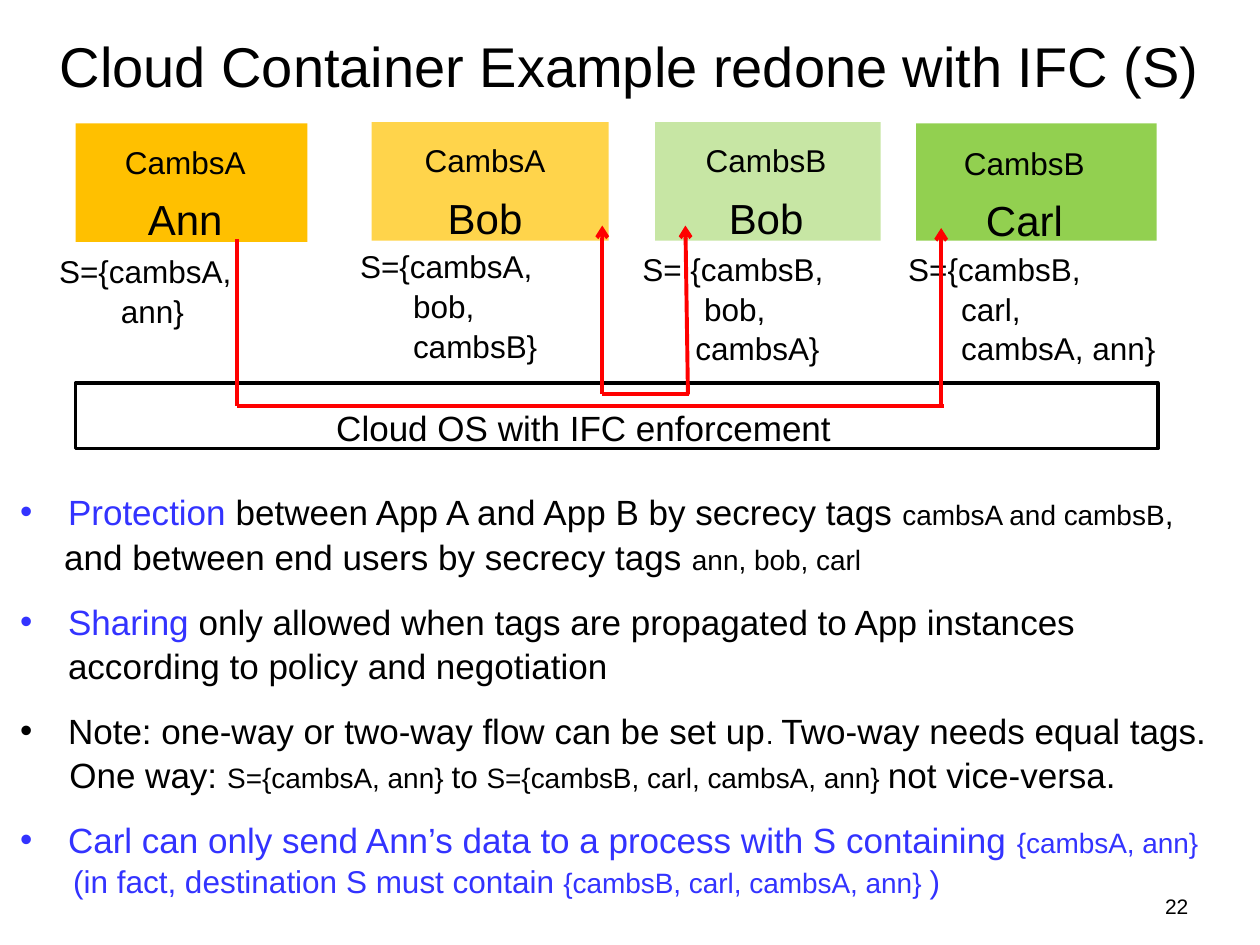
from lxml import etree
from pptx import Presentation
from pptx import util as u
from pptx.dml.color import RGBColor
from pptx.enum import shapes, text
from pptx.oxml.ns import qn

COLORS = {
    "black": "000000", "blue": "3333FF", "red": "FF0000",
    "amber": "FFC000", "light amber": "FFD44B",
    "light green": "C7E6A4", "green": "92D050",
}
FONT = "Arial"
LINE_SPACING = 1.05

# Containers: box, fill, app, user, name position, label position and width,
# label lines as (indent, text)
CONTAINERS = [
    ((0.6, 0.98, 1.84, 0.94), "amber", "CambsA", "Ann", (0.88, 0.98),
     (0.37, 1.94, 2.21), [(0, "S={cambsA,"), (0.49, "ann}")]),
    ((2.95, 0.97, 1.88, 0.94), "light amber", "CambsA", "Bob", (3.26, 0.97),
     (2.76, 1.9, 2.2), [(0, "S={cambsA,"), (0.42, "bob,"), (0.42, "cambsB}")]),
    ((5.2, 0.97, 1.79, 0.94), "light green", "CambsB", "Bob", (5.49, 0.97),
     (5, 1.92, 2.16), [(0, "S= {cambsB,"), (0.49, "bob,"), (0.42, "cambsA}")]),
    ((7.27, 0.98, 1.91, 0.93), "green", "CambsB", "Carl", (7.54, 0.99),
     (7.11, 1.92, 2.52), [(0, "S={cambsB,"), (0.42, "carl,"), (0.42, "cambsA, ann}")]),
]

# Flows: start, end, arrowhead at start
FLOWS = [
    ((4.78, 3.13), (5.47, 3.13), False),
    ((5.44, 1.79), (5.46, 3.13), True),
    ((4.78, 1.79), (4.78, 3.13), True),
    ((1.88, 3.22), (7.49, 3.22), False),
    ((7.47, 1.81), (7.47, 3.22), True),
    ((1.88, 1.9), (1.88, 3.22), False),
]

# Body: bulleted, indent, space before, runs as (text, size, colour)
BODY = [
    (True, 0.38, 4, [("Protection", 20, "blue"),
                     (" between App A and App B by secrecy tags ", 20, "black"),
                     ("cambsA and cambsB", 16, "black"), (",", 18, "black")]),
    (False, 0.35, 0, [("and between end users by secrecy tags ", 20, "black"),
                      ("ann, bob, carl", 16, "black")]),
    (True, 0.38, 12, [("Sharing ", 20, "blue"),
                      ("only allowed when tags are propagated to App instances "
                       "according to policy and negotiation", 20, "black")]),
    (True, 0.38, 12, [("Note: one-way or two-way flow can be set up", 20, "black"),
                      (". ", 16, "black"), ("Two-way needs equal tags.", 20, "black")]),
    (False, 0.39, 0, [("One way: ", 20, "black"), ("S={cambsA, ann} ", 16, "black"),
                      ("to ", 18, "black"),
                      ("S={cambsB, carl, cambsA, ann} ", 16, "black"),
                      ("not vice-versa.", 20, "black")]),
    (True, 0.38, 12, [("Carl can only send Ann’s data to a process with S containing ",
                       20, "blue"), ("{cambsA, ann}", 16, "blue")]),
    (False, 0.42, 0, [("(in fact, destination S must contain ", 18, "blue"),
                      ("{cambsB, carl, cambsA, ann} ", 16, "blue"), (")", 18, "blue")]),
]


def color(name):
    return RGBColor.from_string(COLORS[name])


def place(shape, *box):
    shape.left, shape.top, shape.width, shape.height = map(u.Inches, box)


def style(font, size, name="black"):
    font.name = FONT
    font.size = u.Pt(size)
    font.color.rgb = color(name)


def format_paragraph(paragraph, before=0, align=text.PP_ALIGN.LEFT):
    paragraph.alignment = align
    paragraph.space_before = u.Pt(before)
    paragraph.line_spacing = LINE_SPACING


def set_indent(paragraph, margin, first=0):
    properties = paragraph._p.get_or_add_pPr()
    properties.set("marL", str(u.Inches(margin)))
    properties.set("indent", str(u.Inches(first)))
    return properties


def add_paragraphs(frame, count):
    return [frame.paragraphs[0]] + [frame.add_paragraph() for _ in range(count - 1)]


def add_text_frame(slide, *box):
    frame = slide.shapes.add_textbox(*map(u.Inches, box)).text_frame
    frame.word_wrap = True
    return frame


def add_line_of_text(slide, box, words, size, align=text.PP_ALIGN.LEFT):
    paragraph = add_text_frame(slide, *box).paragraphs[0]
    paragraph.text = words
    style(paragraph.font, size)
    format_paragraph(paragraph, 4, align)


def add_box(slide, box, fill=None):
    shape = slide.shapes.add_shape(shapes.MSO_SHAPE.RECTANGLE, *map(u.Inches, box))
    shape.shadow.inherit = False
    if fill:
        shape.fill.solid()
        shape.fill.fore_color.rgb = color(fill)
        shape.line.fill.background()
    else:
        shape.fill.background()
        shape.line.color.rgb = color("black")
        shape.line.width = u.Pt(2)


def add_name(slide, position, app, user):
    frame = add_text_frame(slide, *position, 1.18, 0.93)
    first, second = add_paragraphs(frame, 2)
    style(first.font, 24)
    # The larger trailing space gives both lines the same height
    for words, size in ((app, 18), (" ", 24)):
        run = first.add_run()
        run.text = words
        style(run.font, size)
    second.text = user
    style(second.font, 24)
    for paragraph in (first, second):
        format_paragraph(paragraph, 4.8, text.PP_ALIGN.CENTER)


def add_label(slide, position, lines):
    frame = add_text_frame(slide, *position, 0.3 * len(lines))
    for paragraph, (indent, words) in zip(add_paragraphs(frame, len(lines)), lines):
        paragraph.text = words
        style(paragraph.font, 18)
        format_paragraph(paragraph, 0 if indent else 3.6)
        set_indent(paragraph, indent)


def add_flow(slide, start, end, arrow):
    connector = slide.shapes.add_connector(
        shapes.MSO_CONNECTOR.STRAIGHT, *map(u.Inches, start + end))
    connector.line.color.rgb = color("red")
    connector.line.width = u.Pt(2.25)
    if arrow:
        line = connector.line._get_or_add_ln()
        etree.SubElement(line, qn("a:headEnd"), type="arrow")
    etree.SubElement(connector._element.spPr, qn("a:effectLst"))


def fill_title(title):
    place(title, 0.25, 0.13, 9.5, 0.77)
    title.text_frame.text = "Cloud Container Example redone with IFC (S)"
    title.text_frame.auto_size = text.MSO_AUTO_SIZE.NONE
    title.text_frame.vertical_anchor = text.MSO_ANCHOR.MIDDLE
    paragraph = title.text_frame.paragraphs[0]
    paragraph.alignment = text.PP_ALIGN.CENTER
    style(paragraph.font, 32)


def fill_body(body):
    place(body, 0.06, 3.83, 9.78, 3.54)
    frame = body.text_frame
    frame.auto_size = text.MSO_AUTO_SIZE.NONE
    for paragraph, item in zip(add_paragraphs(frame, len(BODY)), BODY):
        bulleted, indent, before, runs = item
        format_paragraph(paragraph, before)
        properties = set_indent(paragraph, indent, -indent if bulleted else 0)
        if bulleted:
            etree.SubElement(properties, qn("a:buChar"), char="•")
        else:
            etree.SubElement(properties, qn("a:buNone"))
        for words, size, name in runs:
            run = paragraph.add_run()
            run.text = words
            style(run.font, size, name)


def main():
    presentation = Presentation()
    presentation.slide_width, presentation.slide_height = u.Inches(10), u.Inches(7.5)
    slide = presentation.slides.add_slide(presentation.slide_layouts[1])

    # Title and bullets
    fill_title(slide.shapes.title)
    fill_body(slide.placeholders[1])

    # Containers with their secrecy labels
    for box, fill, app, user, name_at, label_at, lines in CONTAINERS:
        add_box(slide, box, fill)
        add_name(slide, name_at, app, user)
        add_label(slide, label_at, lines)

    # Operating system and the flows through it
    add_box(slide, (0.6, 3.04, 8.59, 0.52))
    add_line_of_text(slide, (2.57, 3.16, 5.41, 0.54), "Cloud OS with IFC enforcement", 20)
    for start, end, arrow in FLOWS:
        add_flow(slide, start, end, arrow)

    # Page number
    add_line_of_text(slide, (7.17, 7.03, 2.36, 0.32), "22", 12, text.PP_ALIGN.RIGHT)
    presentation.save("out.pptx")


if __name__ == "__main__":
    main()
